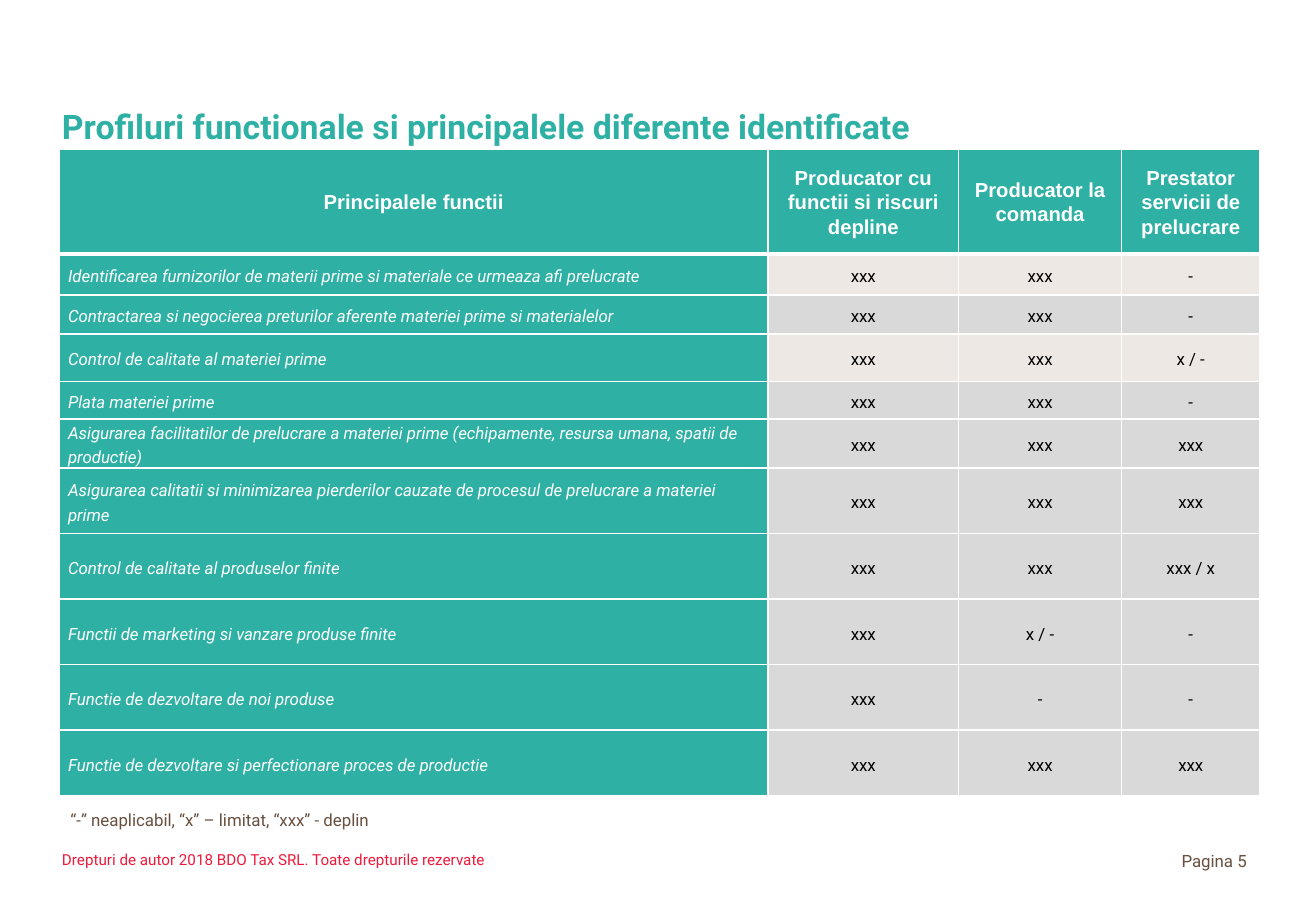
"""Build the slide that compares functional profiles of producers."""
from lxml.etree import SubElement
from pptx import Presentation
from pptx.dml.color import RGBColor
from pptx.enum.text import MSO_ANCHOR as Anchor, PP_ALIGN as Align
from pptx.oxml.ns import qn
from pptx.util import Inches, Pt

TEAL, WHITE, BLACK, BROWN, RED = "2EB0A4", "FFFFFF", "000000", "685040", "ED1A3B"
SAND, GREY = "EEE8E5", "D9D9D9"

HEADERS = ["Principalele functii", "Producator cu functii si riscuri depline",
           "Producator la comanda", "Prestator servicii de prelucrare"]
FUNCTIONS = [
    (0.34, SAND, "Identificarea furnizorilor de materii prime si materiale ce urmeaza afi prelucrate",
     "xxx", "xxx", "-"),
    (0.32, GREY, "Contractarea si negocierea preturilor aferente materiei prime si materialelor",
     "xxx", "xxx", "-"),
    (0.39, SAND, "Control de calitate al materiei prime", "xxx", "xxx", "x / -"),
    (0.31, GREY, "Plata materiei prime", "xxx", "xxx", "-"),
    (0.4, GREY, "Asigurarea facilitatilor de prelucrare a materiei prime "
     "(echipamente, resursa umana, spatii de productie)", "xxx", "xxx", "xxx"),
    (0.54, GREY, "Asigurarea calitatii si minimizarea pierderilor cauzate de procesul "
     "de prelucrare a materiei prime", "xxx", "xxx", "xxx"),
    (0.54, GREY, "Control de calitate al produselor finite", "xxx", "xxx", "xxx / x"),
    (0.54, GREY, "Functii de marketing si vanzare produse finite", "xxx", "x / -", "-"),
    (0.54, GREY, "Functie de dezvoltare de noi produse", "xxx", "-", "-"),
    (0.54, GREY, "Functie de dezvoltare si perfectionare proces de productie", "xxx", "xxx", "xxx"),
]
COLUMN_WIDTHS = [5.83, 1.57, 1.34, 1.14]
HEADER_HEIGHT = 0.86
TABLE_LEFT, TABLE_TOP = 0.49, 1.23

HEADER_FONT = {"name": "Arial", "size": Pt(12), "bold": True}
FUNCTION_FONT = {"name": "Roboto", "size": Pt(10), "italic": True}
MARK_FONT = {"name": "Roboto", "size": Pt(10)}

TEXTS = [
    ("Profiluri functionale si principalele diferente identificate", (0.51, 0.68, 9.75, 0.72),
     TEAL, Align.LEFT, Anchor.MIDDLE, {"name": "Roboto", "size": Pt(20), "bold": True}),
    ("“-” neaplicabil, “x” – limitat, “xxx” - deplin", (0.58, 6.62, 9.79, 0.27),
     BROWN, Align.JUSTIFY, Anchor.TOP, MARK_FONT),
    ("Drepturi de autor 2018 BDO Tax SRL. Toate drepturile rezervate", (0.51, 6.95, 5.42, 0.25),
     RED, Align.LEFT, Anchor.TOP, {"name": "Roboto", "size": Pt(9)}),
    ("Pagina 5", (8.93, 6.95, 1.33, 0.27), BROWN, Align.RIGHT, Anchor.TOP, MARK_FONT),
]


def color(value):
    return RGBColor.from_string(value)


def write(frame, text, align, ink, font):
    para = frame.paragraphs[0]
    para.alignment = align
    span = para.add_run()
    span.text = text
    span.font.color.rgb = color(ink)
    for name, value in font.items():
        setattr(span.font, name, value)
    return para


def add_text(page, text, place, ink, align, anchor, font):
    frame = page.shapes.add_textbox(*map(Inches, place)).text_frame
    settings = {"word_wrap": True, "vertical_anchor": anchor, "margin_left": 0, "margin_right": 0}
    for name, value in settings.items():
        setattr(frame, name, value)
    write(frame, text, align, ink, font)


def add_borders(cell, widths):
    for side, width in widths.items():
        line = SubElement(cell._tc.get_or_add_tcPr(), qn(f"a:ln{side}"), w=str(Pt(width)))
        SubElement(SubElement(line, qn("a:solidFill")), qn("a:srgbClr"), val=WHITE)


def fill_cell(cell, text, back, ink, align, font, borders):
    add_borders(cell, borders)
    cell.fill.solid()
    cell.fill.fore_color.rgb = color(back)
    settings = {"vertical_anchor": Anchor.MIDDLE, "margin_left": Inches(0.07),
                "margin_right": Inches(0.07), "margin_top": 0, "margin_bottom": 0}
    for name, value in settings.items():
        setattr(cell, name, value)
    write(cell.text_frame, text, align, ink, font).line_spacing = Pt(14.5)


def add_profile_table(page):
    heights = [HEADER_HEIGHT] + [function[0] for function in FUNCTIONS]
    place = (TABLE_LEFT, TABLE_TOP, sum(COLUMN_WIDTHS), sum(heights))
    table = page.shapes.add_table(len(heights), len(HEADERS), *map(Inches, place)).table
    table.first_row = table.horz_banding = False
    for column, width in zip(table.columns, COLUMN_WIDTHS):
        column.width = Inches(width)
    for row, height in zip(table.rows, heights):
        row.height = Inches(height)
    for index, header in enumerate(HEADERS):
        fill_cell(table.cell(0, index), header, TEAL, WHITE, Align.CENTER, HEADER_FONT,
                  {"L": 1, "R": 1, "T": 1, "B": 3})
    for row, (_, back, label, *marks) in enumerate(FUNCTIONS, 1):
        borders = {"L": 1, "R": 1, "T": 3 if row == 1 else 1, "B": 1}
        fill_cell(table.cell(row, 0), label, TEAL, WHITE, Align.LEFT, FUNCTION_FONT, borders)
        for index, mark in enumerate(marks, 1):
            fill_cell(table.cell(row, index), mark, back, BLACK, Align.CENTER, MARK_FONT, borders)


def main():
    deck = Presentation()
    deck.slide_width, deck.slide_height = Inches(10.83), Inches(7.5)
    page = deck.slides.add_slide(deck.slide_layouts[6])
    add_profile_table(page)
    for text in TEXTS:
        add_text(page, *text)
    deck.save("out.pptx")


if __name__ == "__main__":
    main()
